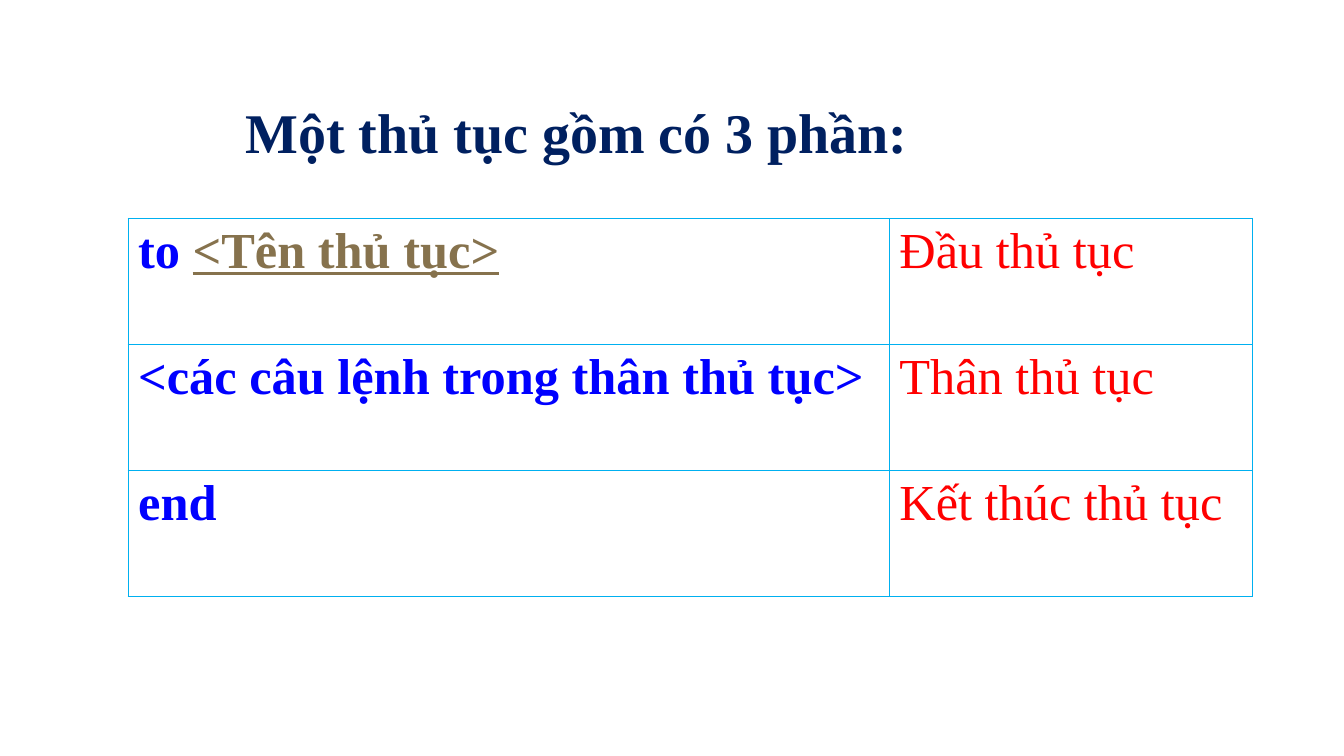
"""Build a slide that lists the three parts of a procedure."""
from lxml import etree
from pptx import Presentation
from pptx.dml.color import RGBColor
from pptx.enum.text import MSO_ANCHOR, MSO_AUTO_SIZE, PP_ALIGN
from pptx.oxml.ns import qn
from pptx.util import Pt

PX = 9525
FONT = "Times New Roman"
NAVY, BLUE, BROWN, RED = "002060", "0000FF", "86724D", "FF0000"
WHITE, BORDER = "FFFFFF", "00B0F0"
COLUMNS = (725, 346)
ROW_HEIGHT = 120
ROWS = (
    ([("to ", BLUE, True, False), ("<Tên thủ tục>", BROWN, True, True)],
     [("Đầu thủ tục", RED, False, False)]),
    ([("<các câu lệnh trong thân thủ tục>", BLUE, True, False)],
     [("Thân thủ tục", RED, False, False)]),
    ([("end", BLUE, True, False)],
     [("Kết thúc thủ tục", RED, False, False)]),
)


def rgb(value):
    return RGBColor.from_string(value)


def style_run(r, size, color, bold, underline=False):
    font = r.font
    font.name, font.size = FONT, Pt(size)
    font.bold, font.underline = bold, underline
    font.color.rgb = rgb(color)


def add_title(s, text, x, y, w, h):
    sp = s.shapes.title
    sp.left, sp.top, sp.width, sp.height = (v * PX for v in (x, y, w, h))
    tf = sp.text_frame
    tf.text = text
    tf.word_wrap = True
    tf.auto_size = MSO_AUTO_SIZE.SHAPE_TO_FIT_TEXT
    tf.vertical_anchor = MSO_ANCHOR.TOP
    p = tf.paragraphs[0]
    p.alignment = PP_ALIGN.LEFT
    style_run(p.runs[0], 40, NAVY, True)


def set_borders(cell, color, width):
    tc_pr = cell._tc.get_or_add_tcPr()
    for i, side in enumerate(("lnL", "lnR", "lnT", "lnB")):
        ln = etree.Element(qn(f"a:{side}"), w=str(Pt(width)))
        fill = etree.SubElement(ln, qn("a:solidFill"))
        etree.SubElement(fill, qn("a:srgbClr"), val=color)
        tc_pr.insert(i, ln)


def fill_cell(cell, runs):
    cell.fill.solid()
    cell.fill.fore_color.rgb = rgb(WHITE)
    set_borders(cell, BORDER, 1)
    p = cell.text_frame.paragraphs[0]
    for text, color, bold, underline in runs:
        r = p.add_run()
        r.text = text
        style_run(r, 36, color, bold, underline)


def add_parts_table(s, x, y):
    w, h = sum(COLUMNS), ROW_HEIGHT * len(ROWS)
    table = s.shapes.add_table(len(ROWS), len(COLUMNS),
                               *(v * PX for v in (x, y, w, h))).table
    table.first_row = table.horz_banding = False
    for column, width in zip(table.columns, COLUMNS):
        column.width = width * PX
    for i, row in enumerate(ROWS):
        for j, runs in enumerate(row):
            fill_cell(table.cell(i, j), runs)


def main():
    prs = Presentation()
    prs.slide_width, prs.slide_height = 1280 * PX, 720 * PX
    s = prs.slides.add_slide(prs.slide_layouts[5])
    add_title(s, "Một thủ tục gồm có 3 phần:", 224, 88, 793, 74)
    add_parts_table(s, 122, 208)
    prs.save("out.pptx")


if __name__ == "__main__":
    main()
